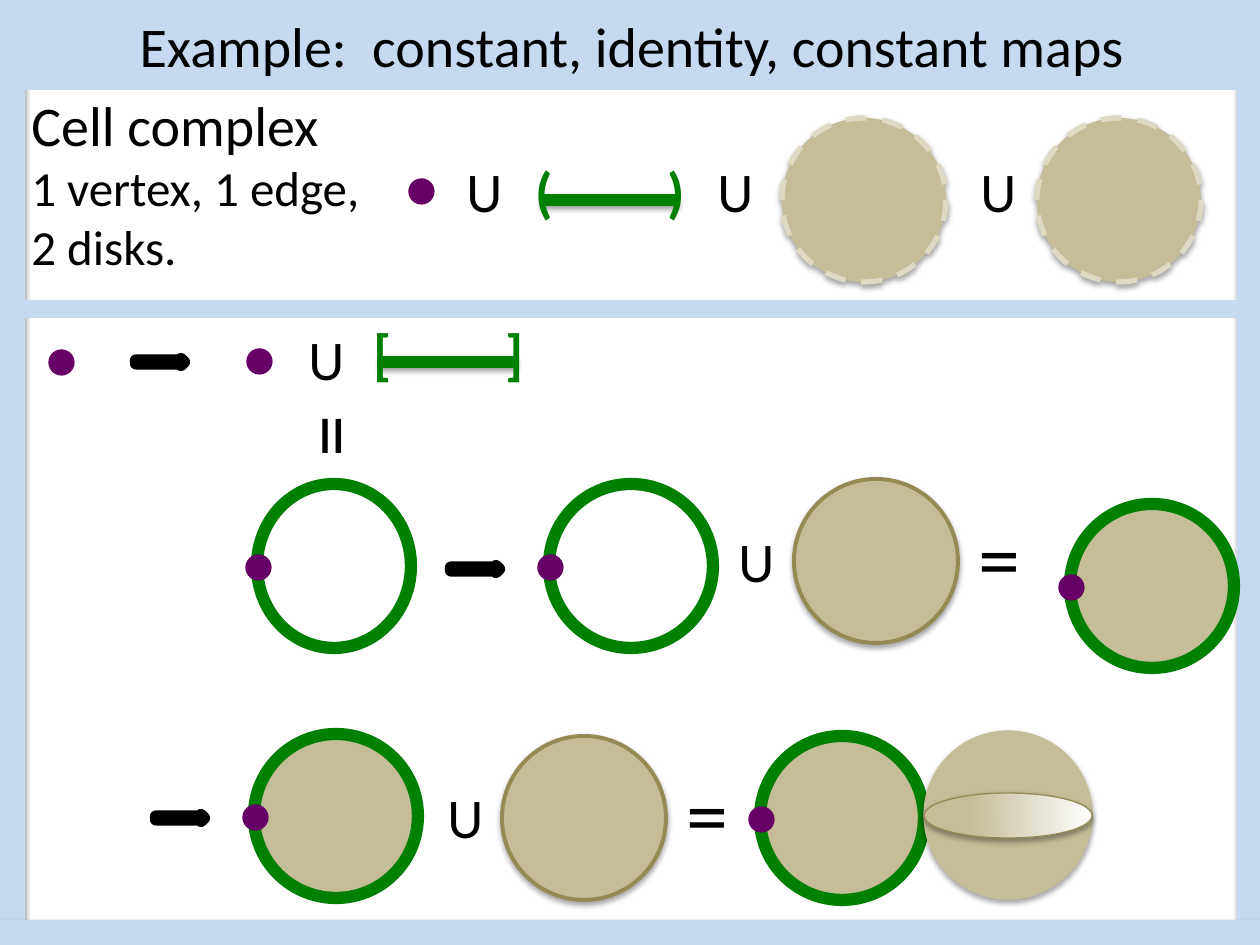
"""Build the slide on cell complexes from constant, identity and constant maps."""
from dataclasses import dataclass
from typing import Any, Optional

import pptx
import pptx.dml.color
import pptx.enum.dml
import pptx.enum.shapes
import pptx.enum.text
import pptx.oxml
import pptx.oxml.ns
import pptx.util
from lxml import etree

SCALE = 914400 / 126
SHAPE = pptx.enum.shapes.MSO_SHAPE
BLUE, PURPLE, GREEN, TAN = "C6D9F1", "660066", "008000", "C4BD97"
OLIVE, CREAM, BLACK, WHITE = "948A54", "DDD9C3", "000000", "FFFFFF"
DOT, DISK = 25, 164


@dataclass
class Box:
    x: int
    y: int
    w: int
    h: int
    kind: Any = SHAPE.OVAL
    fill: Optional[str] = None
    line: Optional[str] = None
    width: float = 0.75
    dashed: bool = False
    shadow: bool = False


@dataclass
class Ring:
    x: int
    y: int
    w: int = DISK
    fill: Optional[str] = None


@dataclass
class Glyph:
    text: str
    x: int
    y: int
    size: int = 32
    rotation: int = 0


@dataclass
class Interval:
    x: int
    y: int
    ends: str


def px(n: int) -> int:
    return pptx.util.Emu(round(n * SCALE))


def rgb(value: str) -> Any:
    return pptx.dml.color.RGBColor.from_string(value)


def add_shadow(effects: Any, alpha: int) -> None:
    shadow = etree.SubElement(effects, pptx.oxml.ns.qn("a:outerShdw"), blurRad="40000",
                              dist="23000", dir="5400000", rotWithShape="0")
    color = etree.SubElement(shadow, pptx.oxml.ns.qn("a:srgbClr"), val=BLACK)
    etree.SubElement(color, pptx.oxml.ns.qn("a:alpha"), val=str(alpha * 1000))


def add_box(s: Any, b: Box) -> Any:
    sp = s.shapes.add_shape(b.kind, px(b.x), px(b.y), px(b.w), px(b.h))
    sp.shadow.inherit = False
    if b.fill:
        sp.fill.solid()
        sp.fill.fore_color.rgb = rgb(b.fill)
    else:
        sp.fill.background()
    if b.line:
        sp.line.color.rgb = rgb(b.line)
        sp.line.width = pptx.util.Pt(b.width)
        if b.dashed:
            sp.line.dash_style = pptx.enum.dml.MSO_LINE.DASH
    else:
        sp.line.fill.background()
    if b.shadow:
        add_shadow(sp.element.spPr.find(pptx.oxml.ns.qn("a:effectLst")), 35)
    return sp


def write(p: Any, text: str, *, size: int = 32, color: str = BLACK, bold: bool = False) -> None:
    r = p.add_run()
    r.text = text
    r.font.name = "Calibri"
    r.font.size = pptx.util.Pt(size)
    r.font.bold = bold
    r.font.color.rgb = rgb(color)


def add_text_frame(s: Any, x: int, y: int, w: int, h: int, rotation: int = 0) -> Any:
    sp = s.shapes.add_textbox(px(x), px(y), px(w), px(h))
    sp.rotation = rotation
    sp.text_frame.word_wrap = True
    return sp.text_frame


def add_glyph(s: Any, g: Glyph) -> None:
    tf = add_text_frame(s, g.x, g.y, 75, 115 if g.size > 32 else 81, g.rotation)
    write(tf.paragraphs[0], g.text, size=g.size)


def add_dot(s: Any, x: int, y: int) -> None:
    add_box(s, Box(x, y, DOT, DOT, fill=PURPLE, line=PURPLE))


def add_ring(s: Any, ring: Ring) -> None:
    add_box(s, Box(ring.x, ring.y, ring.w, DISK, fill=ring.fill, line=GREEN, width=7))
    add_dot(s, ring.x - 11, ring.y + 71)


def add_interval(s: Any, i: Interval) -> None:
    edge = s.shapes.add_connector(pptx.enum.shapes.MSO_CONNECTOR.STRAIGHT,
                                  px(i.x + 138), px(i.y), px(i.x), px(i.y))
    edge.line.color.rgb = rgb(GREEN)
    edge.line.width = pptx.util.Pt(7)
    effects = etree.SubElement(edge.element.spPr, pptx.oxml.ns.qn("a:effectLst"))
    add_shadow(effects, 38)
    for end, dx in zip(i.ends, (-18, 114)):
        tf = add_text_frame(s, i.x + dx, i.y - 50, 50, 81)
        write(tf.paragraphs[0], end, color=GREEN, bold=True)


def add_title(s: Any) -> None:
    sp = s.shapes.title
    sp.left, sp.top, sp.width, sp.height = px(2), px(0), px(1260), px(90)
    sp.fill.solid()
    sp.fill.fore_color.rgb = rgb(BLUE)
    tf = sp.text_frame
    tf.auto_size = pptx.enum.text.MSO_AUTO_SIZE.NONE
    tf.vertical_anchor = pptx.enum.text.MSO_ANCHOR.MIDDLE
    tf.paragraphs[0].alignment = pptx.enum.text.PP_ALIGN.CENTER
    write(tf.paragraphs[0], "Example:  constant, identity, constant maps")
    s.shapes.element.append(sp.element)


def add_sphere(s: Any, x: int, y: int) -> None:
    add_box(s, Box(x, y, 168, 168, fill=TAN, line=TAN, shadow=True))
    fill = add_box(s, Box(x, y + 62, 168, 45, line=OLIVE, shadow=True)).fill
    fill.gradient()
    fill.gradient_angle = 1
    for stop, color, position in zip(fill.gradient_stops, (TAN, WHITE), (0.27, 1)):
        stop.color.rgb = rgb(color)
        stop.position = position


FRAME = [Box(0, 0, 25, 945, SHAPE.RECTANGLE, BLUE, shadow=True),
         Box(1237, 0, 25, 945, SHAPE.RECTANGLE, BLUE, shadow=True),
         Box(2, 0, 1261, 25, SHAPE.RECTANGLE, BLUE),
         Box(-1, 920, 1261, 25, SHAPE.RECTANGLE, BLUE, shadow=True)]
DIVIDER = Box(-1, 300, 1261, 18, SHAPE.RECTANGLE, BLUE)
OPEN_DISKS = [(782, 118), (1037, 118)]
CLOSED_DISKS = [(794, 479), (502, 736)]
RINGS = [Ring(257, 484, 154), Ring(549, 484), Ring(760, 736, fill=TAN),
         Ring(1070, 504, fill=TAN), Ring(254, 734, fill=TAN)]
DOTS = [(409, 179), (247, 349), (49, 350)]
ARROWS = [(136, 359), (451, 566), (156, 815)]
INTERVALS = [Interval(541, 200, "()"), Interval(379, 362, "[]")]
GLYPHS = [Glyph("U", 454, 150), Glyph("U", 705, 150), Glyph("U", 968, 150),
          Glyph("U", 296, 318), Glyph("U", 726, 520), Glyph("U", 435, 776),
          Glyph("=", 301, 383, 48, 90), Glyph("=", 966, 499, 48), Glyph("=", 674, 755, 48)]


def main() -> None:
    prs = pptx.Presentation()
    prs.slide_width, prs.slide_height = px(1260), px(945)
    s = prs.slides.add_slide(prs.slide_layouts[5])
    for b in FRAME:
        add_box(s, b)
    add_title(s)
    for x, y in OPEN_DISKS:
        add_box(s, Box(x, y, DISK, DISK, fill=TAN, line=CREAM, width=3, dashed=True, shadow=True))
    for x, y in CLOSED_DISKS:
        add_box(s, Box(x, y, DISK, DISK, fill=TAN, line=OLIVE, width=2.25, shadow=True))
    for ring in RINGS:
        add_ring(s, ring)
    for x, y in DOTS:
        add_dot(s, x, y)
    for x, y in ARROWS:
        add_box(s, Box(x, y, 48, 6, SHAPE.RIGHT_ARROW, BLACK, BLACK, 7))
    for i in INTERVALS:
        add_interval(s, i)
    for g in GLYPHS:
        add_glyph(s, g)
    tf = add_text_frame(s, 19, 84, 377, 267)
    write(tf.paragraphs[0], "Cell complex")
    write(tf.add_paragraph(), "1 vertex, 1 edge, 2 disks.", size=28)
    add_sphere(s, 924, 731)
    add_box(s, DIVIDER)
    prs.save("out.pptx")


if __name__ == "__main__":
    main()
